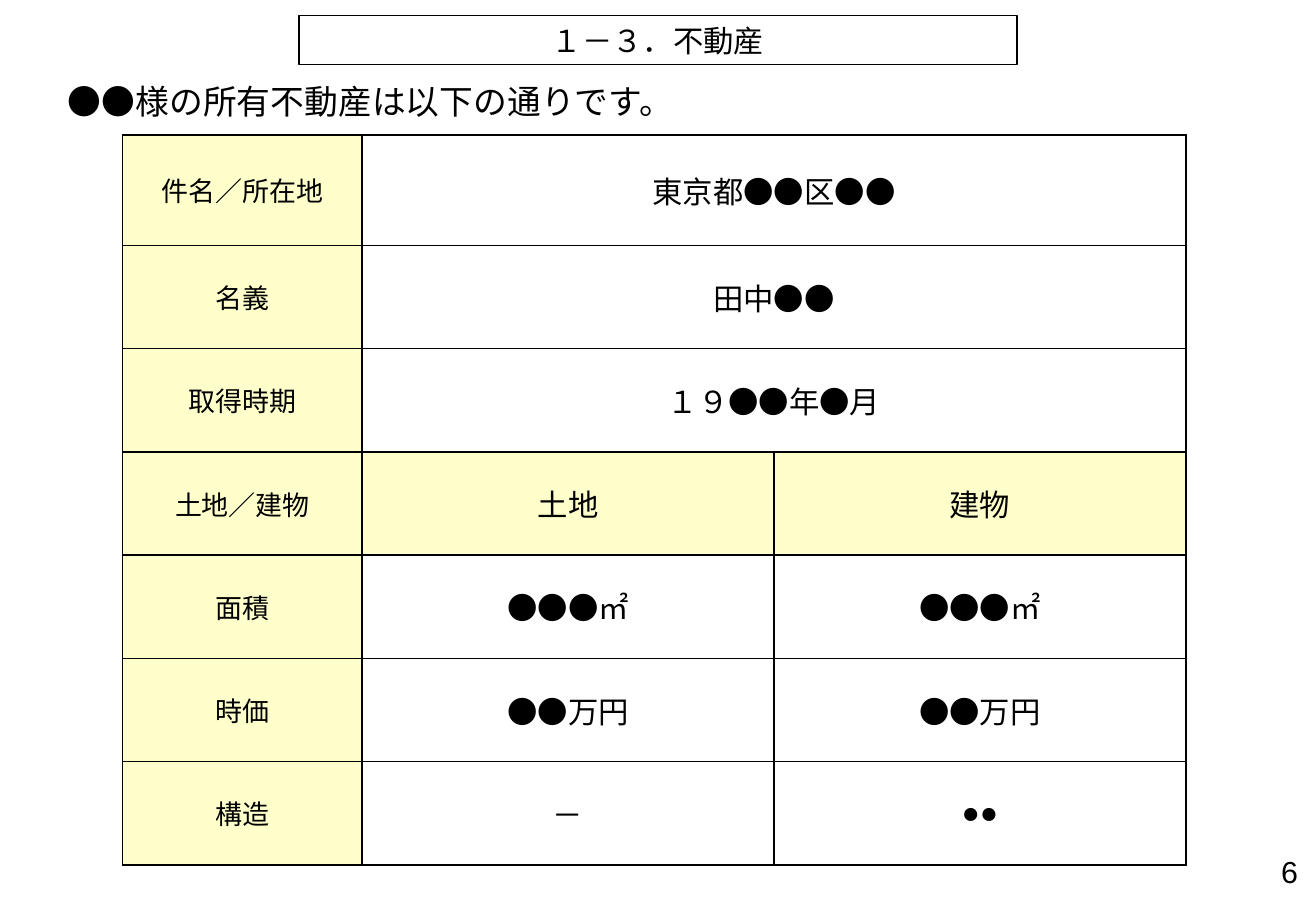
import pptx
import pptx.util
import pptx.dml.color
import pptx.enum.text
import pptx.oxml
import pptx.oxml.ns
from pptx.util import Inches

TITLE = "１－３．不動産"
LEAD = "●●様の所有不動産は以下の通りです。"
PAGE = "6"
ROWS = [
    ("件名／所在地", "東京都●●区●●"),
    ("名義", "田中●●"),
    ("取得時期", "１９●●年●月"),
    ("土地／建物", "土地", "建物"),
    ("面積", "●●●㎡", "●●●㎡"),
    ("時価", "●●万円", "●●万円"),
    ("構造", "－", "●●"),
]
HEADER_ROW = 3
COL_WIDTHS = [1.97, 3.39, 3.39]
ROW_HEIGHTS = [0.91] + [0.85] * 6
COLORS = {"text": "000000", "line": "000000", "paper": "FFFFFF", "label": "FFFFCC"}
LATIN, ASIAN = "Arial", "Noto Sans CJK JP"
ALIGN = pptx.enum.text.PP_ALIGN


def rgb(name):
    return pptx.dml.color.RGBColor.from_string(COLORS[name])


def write(tf, text, size=18, align=ALIGN.CENTER, font=LATIN):
    tf.word_wrap = True
    tf.vertical_anchor = pptx.enum.text.MSO_ANCHOR.MIDDLE
    p = tf.paragraphs[0]
    p.alignment = align
    r = p.add_run()
    r.text = text
    r.font.size = pptx.util.Pt(size)
    r.font.name = font
    r.font.color.rgb = rgb("text")
    ea = pptx.oxml.parse_xml(f'<a:ea {pptx.oxml.ns.nsdecls("a")} typeface="{ASIAN}"/>')
    r.font._element.find(pptx.oxml.ns.qn("a:latin")).addnext(ea)


def place(sp, left, top, width, height):
    sp.left, sp.top = Inches(left), Inches(top)
    sp.width, sp.height = Inches(width), Inches(height)


def set_borders(cell):
    tcPr = cell._tc.get_or_add_tcPr()
    for i, side in enumerate(("lnL", "lnR", "lnT", "lnB")):
        tcPr.insert(i, pptx.oxml.parse_xml(
            f'<a:{side} {pptx.oxml.ns.nsdecls("a")} w="12700"><a:solidFill>'
            f'<a:srgbClr val="{COLORS["line"]}"/></a:solidFill></a:{side}>'))


def add_property_table(s):
    table = s.shapes.add_table(
        len(ROWS), len(COL_WIDTHS), Inches(1.01), Inches(1.11),
        Inches(sum(COL_WIDTHS)), Inches(sum(ROW_HEIGHTS))).table
    table.first_row = table.horz_banding = False
    for col, width in zip(table.columns, COL_WIDTHS):
        col.width = Inches(width)
    for i, texts in enumerate(ROWS):
        table.rows[i].height = Inches(ROW_HEIGHTS[i])
        for j in range(len(COL_WIDTHS)):
            cell = table.cell(i, j)
            cell.margin_left = cell.margin_right = 0
            cell.margin_top = cell.margin_bottom = 0
            cell.fill.solid()
            is_label = j == 0 or i == HEADER_ROW
            cell.fill.fore_color.rgb = rgb("label" if is_label else "paper")
            set_borders(cell)
            if j < len(texts):
                write(cell.text_frame, texts[j], size=16 if j == 0 else 18)
                cell.vertical_anchor = pptx.enum.text.MSO_ANCHOR.MIDDLE
        if len(texts) < len(COL_WIDTHS):
            table.cell(i, 1).merge(table.cell(i, 2))


def main():
    prs = pptx.Presentation()
    prs.slide_width, prs.slide_height = Inches(10.83), Inches(7.5)
    s = prs.slides.add_slide(prs.slide_layouts[5])

    title = s.shapes.title
    place(title, 2.46, 0.13, 5.91, 0.4)
    title.fill.solid()
    title.fill.fore_color.rgb = rgb("paper")
    title.line.color.rgb = rgb("line")
    title.line.width = pptx.util.Pt(0.75)
    title.text_frame.auto_size = pptx.enum.text.MSO_AUTO_SIZE.NONE
    write(title.text_frame, TITLE)

    page = s.shapes.add_textbox(Inches(8.64), Inches(6.98), Inches(2.14), Inches(0.39))
    write(page.text_frame, PAGE, align=ALIGN.RIGHT)

    lead = s.shapes.add_textbox(Inches(0.46), Inches(0.6), Inches(9.92), Inches(0.47))
    write(lead.text_frame, LEAD, size=20, align=ALIGN.LEFT, font=ASIAN)

    add_property_table(s)
    prs.save("out.pptx")


if __name__ == "__main__":
    main()
